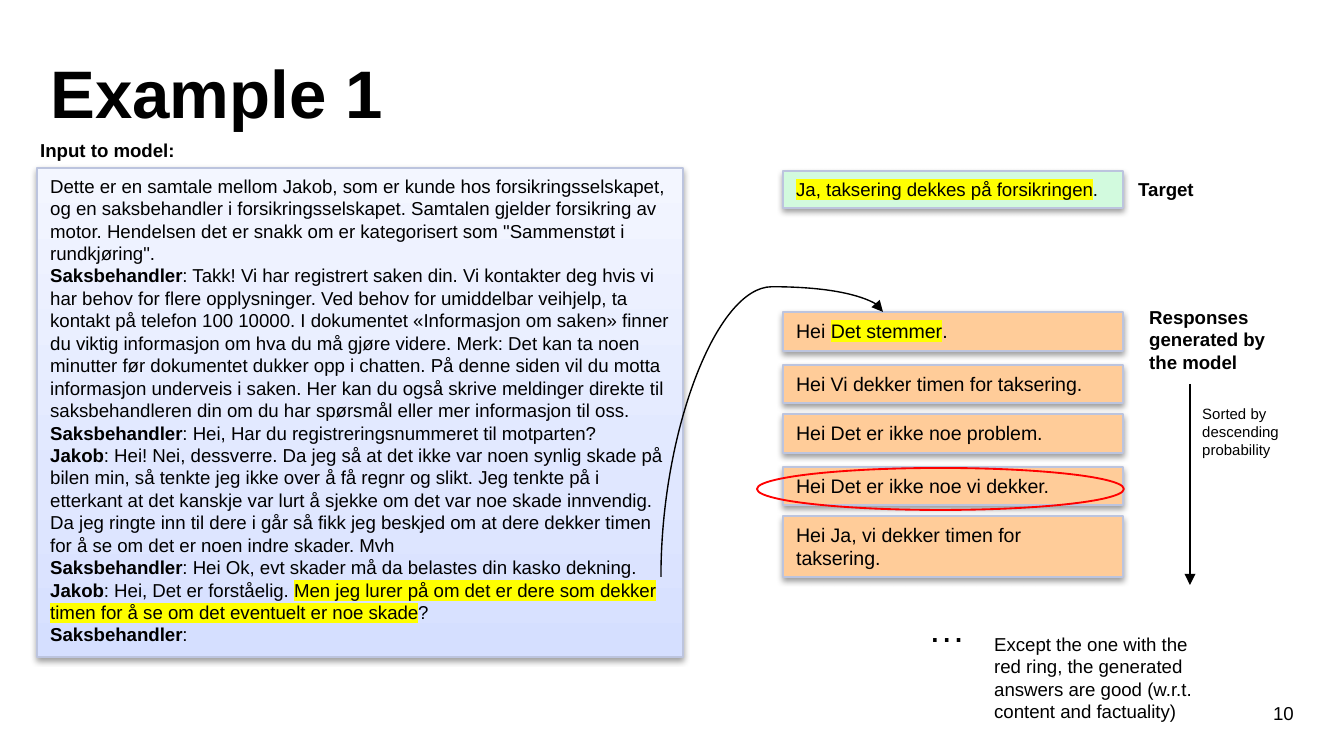
from dataclasses import dataclass

from lxml import etree
from pptx import Presentation
from pptx.dml.color import RGBColor
from pptx.enum.shapes import MSO_CONNECTOR, MSO_SHAPE
from pptx.enum.text import MSO_ANCHOR, MSO_AUTO_SIZE, PP_ALIGN
from pptx.oxml.ns import qn
from pptx.util import Pt

RECTANGLE, OVAL = MSO_SHAPE.RECTANGLE, MSO_SHAPE.OVAL
STRAIGHT, CURVE = MSO_CONNECTOR.STRAIGHT, MSO_CONNECTOR.CURVE
LEFT, RIGHT = PP_ALIGN.LEFT, PP_ALIGN.RIGHT
TOP, BOTTOM = MSO_ANCHOR.TOP, MSO_ANCHOR.BOTTOM
NO_AUTOSIZE = MSO_AUTO_SIZE.NONE
TITLE_ONLY = 5
EMU_PER_PX = 914400 / 134.4


@dataclass(frozen=True)
class Theme:
    font: str = "Arial"
    text: str = "000000"
    highlight: str = "FFFF00"
    border: str = "BCC4DE"
    target: str = "D2FADE"
    response: str = "FFCC99"
    ring: str = "FF0000"
    gradient: tuple = ((0, "D5DFFF"), (35, "E0E7FF"), (100, "F3F6FF"))
    title_size: float = 36
    ellipsis_size: float = 20
    response_size: float = 10.5
    body_size: float = 10
    note_size: float = 8


@dataclass(frozen=True)
class Run:
    text: str
    bold: bool = False
    highlight: bool = False


@dataclass(frozen=True)
class Box:
    left: int
    top: int
    width: int
    height: int

    def emu(self) -> tuple:
        return tuple(px(value) for value in (self.left, self.top, self.width, self.height))


@dataclass(frozen=True)
class Label:
    box: Box
    paragraphs: tuple
    size: float
    align: PP_ALIGN = LEFT


@dataclass(frozen=True)
class Card:
    box: Box
    paragraphs: tuple
    size: float
    fill: str = ""


THEME = Theme()


def px(value: int) -> int:
    return round(value * EMU_PER_PX)


def plain(text: str, bold: bool = False) -> tuple:
    return (Run(text, bold),)


def turn(speaker: str, *speech: Run) -> tuple:
    return (Run(speaker, True), *speech)


def apply(target, values: dict) -> None:
    for name, value in values.items():
        setattr(target, name, value)


def add_xml(parent, tag: str, **attributes):
    return etree.SubElement(parent, qn(tag), {key: str(value) for key, value in attributes.items()})


def write_text(shape, paragraphs: tuple, size: float, align=LEFT, anchor=TOP) -> None:
    frame = shape.text_frame
    apply(frame, {"word_wrap": True, "auto_size": NO_AUTOSIZE, "vertical_anchor": anchor})
    for index, runs in enumerate(paragraphs):
        paragraph = frame.add_paragraph() if index else frame.paragraphs[0]
        paragraph.alignment = align
        for item in runs:
            if item.text == "\n":
                paragraph.add_line_break()
                continue
            run = paragraph.add_run()
            run.text = item.text
            apply(run.font, {"name": THEME.font, "size": Pt(size), "bold": item.bold})
            run.font.color.rgb = RGBColor.from_string(THEME.text)
            if item.highlight:
                properties = run.font._element
                highlight = add_xml(properties, "a:highlight")
                add_xml(highlight, "a:srgbClr", val=THEME.highlight)
                properties.find(qn("a:solidFill")).addnext(highlight)


def add_label(slide, label: Label) -> None:
    shape = slide.shapes.add_textbox(*label.box.emu())
    write_text(shape, label.paragraphs, label.size, label.align)


def fill_gradient(shape) -> None:
    shape.fill.gradient()
    shape.fill.gradient_angle = 90
    stops = shape._element.spPr.find(qn("a:gradFill")).find(qn("a:gsLst"))
    for stop in list(stops):
        stops.remove(stop)
    for position, color in THEME.gradient:
        stop = add_xml(stops, "a:gs", pos=position * 1000)
        add_xml(stop, "a:srgbClr", val=color)


def set_line(shape, color: str, width: float) -> None:
    shape.line.color.rgb = RGBColor.from_string(color)
    shape.line.width = Pt(width)


def add_card(slide, card: Card) -> None:
    shape = slide.shapes.add_shape(RECTANGLE, *card.box.emu())
    if card.fill:
        shape.fill.solid()
        shape.fill.fore_color.rgb = RGBColor.from_string(card.fill)
    else:
        fill_gradient(shape)
    set_line(shape, THEME.border, 0.75)
    shape.shadow.inherit = False
    effects = shape._element.spPr.find(qn("a:effectLst"))
    shadow = add_xml(effects, "a:outerShdw", blurRad=40000, dist=20000, dir=5400000, rotWithShape=0)
    color = add_xml(shadow, "a:srgbClr", val=THEME.text)
    add_xml(color, "a:alpha", val=38000)
    write_text(shape, card.paragraphs, card.size)


def add_ring(slide, box: Box) -> None:
    ring = slide.shapes.add_shape(OVAL, *box.emu())
    ring.shadow.inherit = False
    ring.fill.background()
    set_line(ring, THEME.ring, 1)


def add_arrow(slide, kind: MSO_CONNECTOR, start: tuple, end: tuple):
    arrow = slide.shapes.add_connector(kind, *(px(value) for value in start + end))
    set_line(arrow, THEME.text, 0.75)
    add_xml(arrow.line._ln, "a:tailEnd", type="triangle")
    add_xml(arrow._element.spPr, "a:effectLst")
    return arrow


def add_curved_arrow(slide, start: tuple, end: tuple, bend: int) -> None:
    center_x, center_y = (start[0] + end[0]) / 2, (start[1] + end[1]) / 2
    half_width, half_height = (start[1] - end[1]) / 2, (end[0] - start[0]) / 2
    arrow = add_arrow(slide, CURVE, (center_x + half_width, center_y + half_height),
                      (center_x - half_width, center_y - half_height))
    properties = arrow._element.spPr
    properties.find(qn("a:xfrm")).set("rot", "5400000")
    guides = properties.find(qn("a:prstGeom")).find(qn("a:avLst"))
    add_xml(guides, "a:gd", name="adj1", fmla=f"val {bend}")


CONVERSATION = (
    plain("Dette er en samtale mellom Jakob, som er kunde hos forsikringsselskapet, og en saksbehandler i forsikringsselskapet. Samtalen gjelder forsikring av motor. Hendelsen det er snakk om er kategorisert som \"Sammenstøt i rundkjøring\"."),
    turn("Saksbehandler", Run(": Takk! Vi har registrert saken din. Vi kontakter deg hvis vi har behov for flere opplysninger. Ved behov for umiddelbar veihjelp, ta kontakt på telefon 100 10000. I dokumentet «Informasjon om saken» finner du viktig informasjon om hva du må gjøre videre. Merk: Det kan ta noen minutter før dokumentet dukker opp i chatten. På denne siden vil du motta informasjon underveis i saken. Her kan du også skrive meldinger direkte til saksbehandleren din om du har spørsmål eller mer informasjon til oss.")),
    turn("Saksbehandler", Run(": Hei, Har du registreringsnummeret til motparten?")),
    turn("Jakob", Run(": Hei! Nei, dessverre. Da jeg så at det ikke var noen synlig skade på bilen min, så tenkte jeg ikke over å få regnr og slikt. Jeg tenkte på i etterkant at det kanskje var lurt å sjekke om det var noe skade innvendig. Da jeg ringte inn til dere i går så fikk jeg beskjed om at dere dekker timen for å se om det er noen indre skader. Mvh")),
    turn("Saksbehandler", Run(": Hei Ok, evt skader må da belastes din kasko dekning."), Run("\n"),
         Run("Jakob", True), Run(": Hei, Det er forståelig. "),
         Run("Men jeg lurer på om det er dere som dekker timen for å se om det eventuelt er noe skade", highlight=True),
         Run("?")),
    turn("Saksbehandler", Run(":")),
)
TARGET = (Run("Ja, taksering dekkes på forsikringen", highlight=True), Run("."))
RESPONSES = (
    (312, 39, (Run("Hei "), Run("Det stemmer", highlight=True), Run("."))),
    (365, 38, plain("Hei Vi dekker timen for taksering.")),
    (414, 39, plain("Hei Det er ikke noe problem.")),
    (467, 38, plain("Hei Det er ikke noe vi dekker.")),
    (516, 61, plain("Hei Ja, vi dekker timen for taksering.")),
)
CARDS = (
    Card(Box(37, 168, 646, 489), CONVERSATION, THEME.body_size),
    Card(Box(783, 171, 340, 37), (TARGET,), THEME.body_size, THEME.target),
    *(Card(Box(783, top, 340, height), (runs,), THEME.response_size, THEME.response)
      for top, height, runs in RESPONSES),
)
LABELS = (
    Label(Box(1249, 695, 58, 32), (plain("10"),), THEME.body_size, RIGHT),
    Label(Box(915, 599, 106, 59), (plain("…"),), THEME.ellipsis_size),
    Label(Box(1125, 171, 173, 36), (plain("Target", True),), THEME.body_size),
    Label(Box(1136, 299, 173, 82), (plain("Responses generated by the model", True),), THEME.body_size),
    Label(Box(1189, 398, 173, 67), (plain("Sorted by"), plain("descending probability")), THEME.note_size),
    Label(Box(27, 132, 195, 36), (plain("Input to model:", True),), THEME.body_size),
    Label(Box(981, 626, 242, 104), (plain("Except the one with the red ring, the generated answers are good (w.r.t. content and factuality)"),), THEME.body_size),
)


def main() -> None:
    presentation = Presentation()
    apply(presentation, {"slide_width": px(1344), "slide_height": px(756)})
    slide = presentation.slides.add_slide(presentation.slide_layouts[TITLE_ONLY])
    title = slide.shapes.title
    apply(title, dict(zip(("left", "top", "width", "height"), Box(37, 28, 1270, 112).emu())))
    write_text(title, (plain("Example 1", True),), THEME.title_size, anchor=BOTTOM)
    title.text_frame.paragraphs[0].line_spacing = 0.9
    for card in CARDS:
        add_card(slide, card)
    add_ring(slide, Box(757, 468, 367, 42))
    for label in LABELS:
        add_label(slide, label)
    add_arrow(slide, STRAIGHT, (1190, 384), (1190, 585))
    add_curved_arrow(slide, (661, 577), (883, 312), 109500)
    presentation.save("out.pptx")


if __name__ == "__main__":
    main()
